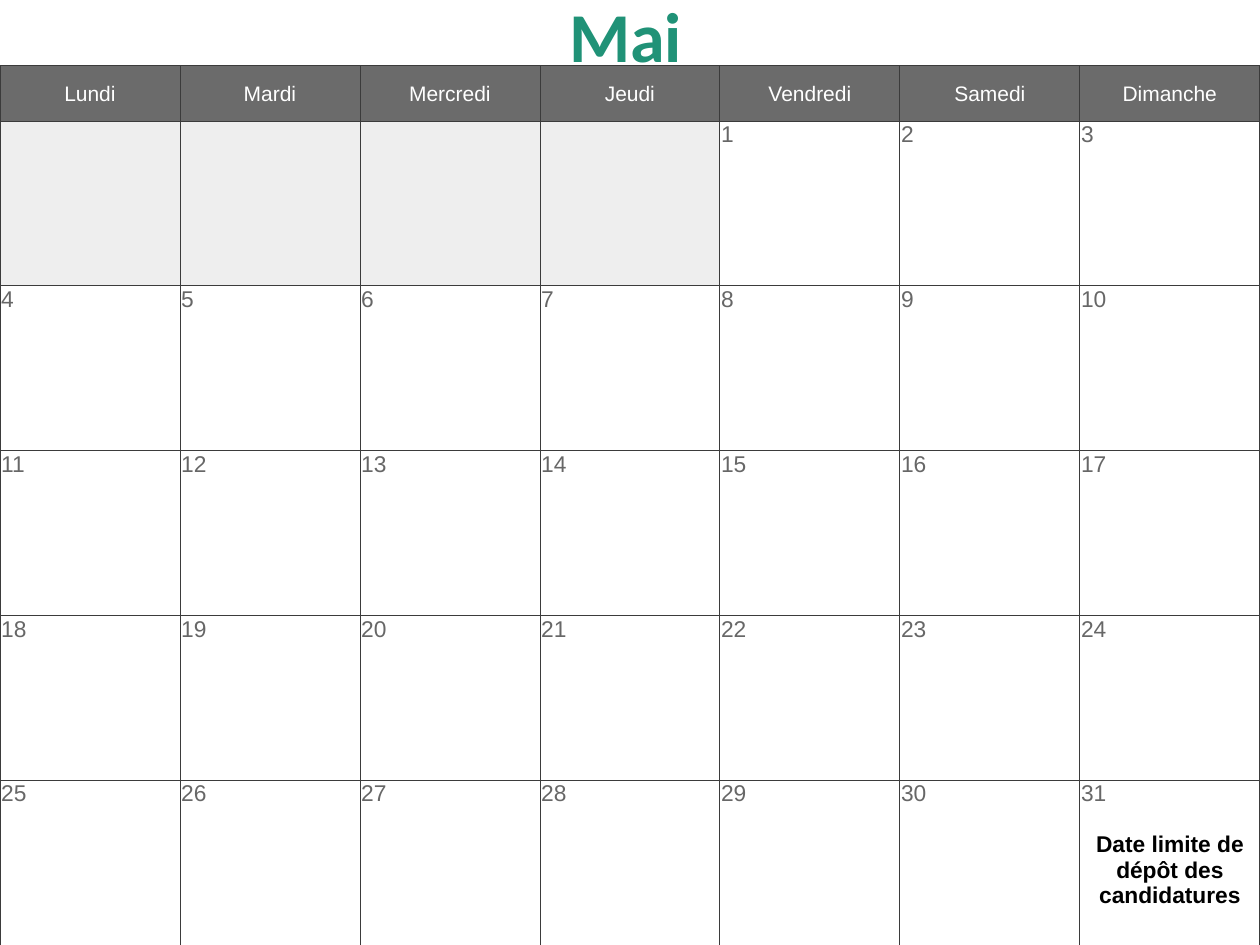
from lxml import etree
from pptx import Presentation, util as u
from pptx.dml.color import RGBColor
from pptx.enum import text
from pptx.oxml import ns

HEADER = RGBColor(0x6B, 0x6B, 0x6B)
UNUSED = RGBColor(0xEE, 0xEE, 0xEE)
WHITE = RGBColor(0xFF, 0xFF, 0xFF)
BLACK = RGBColor(0, 0, 0)
DAY = RGBColor(0x67, 0x67, 0x67)
TITLE = RGBColor(0x20, 0x92, 0x77)
BORDER = RGBColor(0x3B, 0x3B, 0x3B)

WEEKDAYS = ["Lundi", "Mardi", "Mercredi", "Jeudi", "Vendredi", "Samedi", "Dimanche"]
FIRST_COLUMN, LAST_DAY, WEEKS = 4, 31, 5
EVENTS = {31: "Date limite de dépôt des candidatures"}
CELL_FORMAT = {"margin_left": u.Inches(0.01), "margin_right": u.Inches(0.01),
               "margin_top": u.Inches(0.01), "margin_bottom": 0}


def write(para, words, color, **font_format):
    span = para.add_run()
    span.text = words
    span.font.color.rgb = color
    for name, value in font_format.items():
        setattr(span.font, name, value)


def add_borders(cell):
    properties = cell._tc.get_or_add_tcPr()
    for side in ("a:lnL", "a:lnR", "a:lnT", "a:lnB"):
        line = etree.SubElement(properties, ns.qn(side), w=str(u.Pt(0.5)))
        fill = etree.SubElement(line, ns.qn("a:solidFill"))
        etree.SubElement(fill, ns.qn("a:srgbClr"), val=str(BORDER))


deck = Presentation()
deck.slide_width, deck.slide_height = u.Inches(10), u.Inches(7.5)
page = deck.slides.add_slide(deck.slide_layouts[6])

# Calendar grid: one header row, then equal weeks down to the bottom edge
columns = len(WEEKDAYS)
top, header_height = u.Inches(0.52), u.Inches(0.44)
week_height = (deck.slide_height - top - header_height) // WEEKS
frame = page.shapes.add_table(WEEKS + 1, columns, 0, top,
                              deck.slide_width, deck.slide_height - top)
calendar = frame.table
calendar.first_row = calendar.horz_banding = False
for column in calendar.columns:
    column.width = deck.slide_width // columns
for index, row in enumerate(calendar.rows):
    row.height = week_height if index else header_height

# Weekday names and numbered days
for position, cell in enumerate(calendar.iter_cells()):
    for name, value in CELL_FORMAT.items():
        setattr(cell, name, value)
    add_borders(cell)
    cell.fill.solid()
    para = cell.text_frame.paragraphs[0]
    day = position - columns - FIRST_COLUMN + 1
    if position < columns:
        cell.fill.fore_color.rgb = HEADER
        cell.vertical_anchor = text.MSO_ANCHOR.MIDDLE
        para.alignment = text.PP_ALIGN.CENTER
        write(para, WEEKDAYS[position], WHITE, name="Arial", size=u.Pt(12))
    elif 1 <= day <= LAST_DAY:
        cell.fill.fore_color.rgb = WHITE
        write(para, str(day), DAY, name="Arial", size=u.Pt(13))
        if day in EVENTS:
            event = cell.text_frame.add_paragraph()
            event.alignment = text.PP_ALIGN.CENTER
            event.space_before = u.Pt(14.6)
            write(event, EVENTS[day], BLACK, name="Arial", size=u.Pt(13), bold=True)
    else:
        cell.fill.fore_color.rgb = UNUSED

# Month title
box = page.shapes.add_textbox(u.Inches(4.41), u.Inches(-0.11), u.Inches(1.11), u.Inches(0.77))
box.text_frame.word_wrap = False
box.text_frame.auto_size = text.MSO_AUTO_SIZE.SHAPE_TO_FIT_TEXT
para = box.text_frame.paragraphs[0]
para.alignment = text.PP_ALIGN.CENTER
write(para, "Mai", TITLE, name="Calibri", size=u.Pt(40), bold=True)

deck.save("out.pptx")
